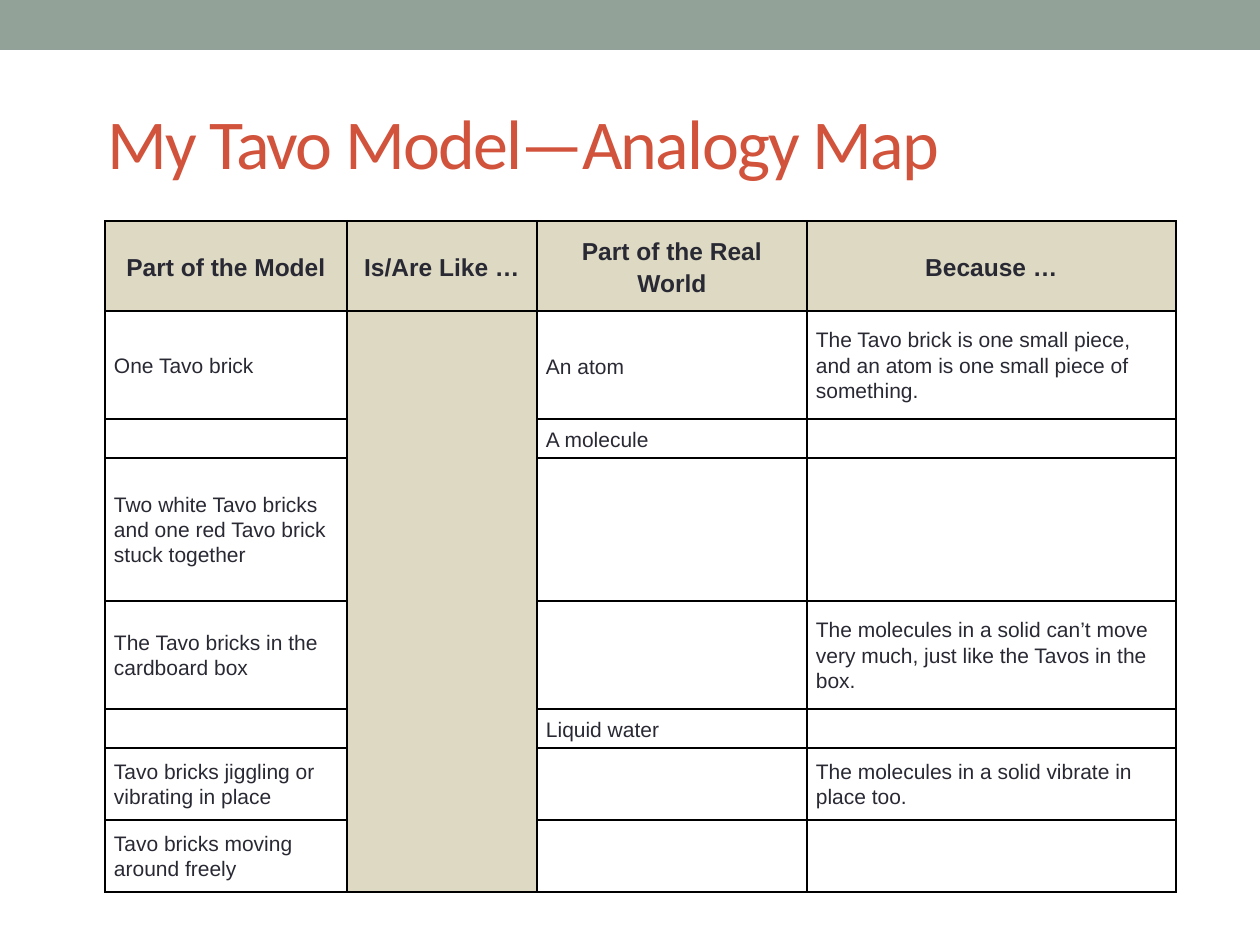
from lxml import etree
from pptx import Presentation
from pptx.dml.color import RGBColor
from pptx.enum.shapes import MSO_SHAPE
from pptx.enum.text import MSO_ANCHOR, PP_ALIGN
from pptx.oxml.ns import qn
from pptx.util import Emu, Pt

RECT = MSO_SHAPE.RECTANGLE
MIDDLE = MSO_ANCHOR.MIDDLE
LEFT, CENTER = PP_ALIGN.LEFT, PP_ALIGN.CENTER

SAGE = RGBColor(0x93, 0xA2, 0x99)
RUST = RGBColor(0xD2, 0x53, 0x3C)
SAND = RGBColor(0xDD, 0xD9, 0xC3)
INK = RGBColor(0x29, 0x29, 0x34)
BORDER = "000000"

PX_PER_INCH = 126
COLUMNS = [242, 190, 270, 369]
ROWS = [90, 108, 39, 143, 108, 39, 72, 72]
LIKE_COLUMN = 1

HEADERS = ["Part of the Model", "Is/Are Like …", "Part of the Real World", "Because …"]

# (row, column): text, line spacing, space before, space after
ENTRIES = {
    (1, 0): ("One Tavo brick", 1.07, 6, 6),
    (1, 2): ("An atom", 1.15, 6, 6),
    (1, 3): ("The Tavo brick is one small piece, and an atom is one small piece "
             "of something.", 1.07, 6, 6),
    (2, 2): ("A molecule", 1.15, 6, 6),
    (3, 0): ("Two white Tavo bricks and one red Tavo brick stuck together", 1.07, 12, 12),
    (4, 0): ("The Tavo bricks in the cardboard box", 1.07, 12, 12),
    (4, 3): ("The molecules in a solid can’t move very much, just like the Tavos "
             "in the box.", 1.07, 6, 6),
    (5, 2): ("Liquid water", 1.15, 0, 12),
    (6, 0): ("Tavo bricks jiggling or vibrating in place", 1.07, 12, 12),
    (6, 3): ("The molecules in a solid vibrate in place too.", 1.07, 6, 6),
    (7, 0): ("Tavo bricks moving around freely", 1.07, 6, 6),
}


def px(n):
    return Emu(round(n * 914400 / PX_PER_INCH))


def style_run(r, font, size, color, bold=False):
    r.font.name = font
    r.font.size = Pt(size)
    r.font.color.rgb = color
    r.font.bold = bold


def add_band(s):
    sp = s.shapes.add_shape(RECT, 0, 0, px(1260), px(50))
    sp.shadow.inherit = False
    sp.fill.solid()
    sp.fill.fore_color.rgb = SAGE
    sp.line.fill.background()


def add_title(s, text):
    tf = s.shapes.add_textbox(px(95), px(73), px(1102), px(136)).text_frame
    tf.word_wrap = True
    tf.vertical_anchor = MIDDLE
    tf.text = text
    r = tf.paragraphs[0].runs[0]
    style_run(r, "Calibri", 40, RUST)
    r.font._element.set("spc", "-100")


def set_borders(cell):
    tc_pr = cell._tc.get_or_add_tcPr()
    for side in ("a:lnL", "a:lnR", "a:lnT", "a:lnB"):
        ln = etree.SubElement(tc_pr, qn(side), w=str(Pt(1)))
        fill = etree.SubElement(ln, qn("a:solidFill"))
        etree.SubElement(fill, qn("a:srgbClr"), val=BORDER)


def style_cell(cell, shaded):
    cell.margin_left = cell.margin_right = px(9)
    cell.margin_top = cell.margin_bottom = 0
    cell.vertical_anchor = MIDDLE
    set_borders(cell)
    if shaded:
        cell.fill.solid()
        cell.fill.fore_color.rgb = SAND
    else:
        cell.fill.background()
    # An empty cell keeps its row low only with a small end-of-paragraph size.
    end = cell.text_frame.paragraphs[0]._p.get_or_add_endParaRPr()
    end.set("sz", "1200")


def write_cell(cell, text, spacing, before, after, size=12, bold=False, align=LEFT):
    p = cell.text_frame.paragraphs[0]
    p.text = text
    p.alignment = align
    p.line_spacing = spacing
    p.space_before = Pt(before)
    p.space_after = Pt(after)
    style_run(p.runs[0], "Arial", size, INK, bold)


def add_analogy_table(s):
    table = s.shapes.add_table(len(ROWS), len(COLUMNS), px(105), px(221),
                               px(sum(COLUMNS)), px(sum(ROWS))).table
    table.first_row = table.horz_banding = False
    for column, width in zip(table.columns, COLUMNS):
        column.width = px(width)
    for row, height in zip(table.rows, ROWS):
        row.height = px(height)

    for i in range(len(ROWS)):
        for j in range(len(COLUMNS)):
            style_cell(table.cell(i, j), shaded=i == 0 or j == LIKE_COLUMN)
    table.cell(1, LIKE_COLUMN).merge(table.cell(len(ROWS) - 1, LIKE_COLUMN))

    for j, header in enumerate(HEADERS):
        write_cell(table.cell(0, j), header, 1.15, 6, 6, size=14, bold=True, align=CENTER)
    for (i, j), entry in ENTRIES.items():
        write_cell(table.cell(i, j), *entry)


def main():
    prs = Presentation()
    prs.slide_width, prs.slide_height = px(1260), px(945)
    s = prs.slides.add_slide(prs.slide_layouts[6])
    add_band(s)
    add_title(s, "My Tavo Model—Analogy Map")
    add_analogy_table(s)
    prs.save("out.pptx")


if __name__ == "__main__":
    main()
